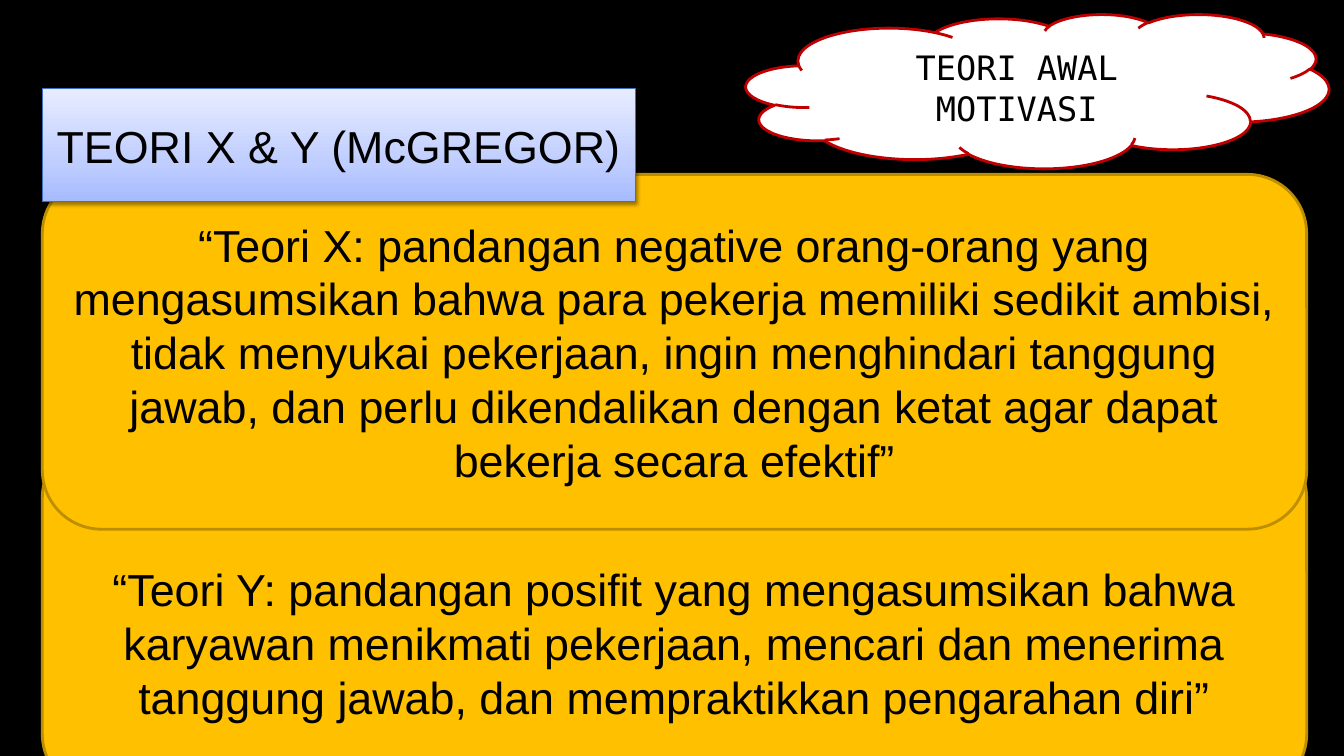
from copy import deepcopy
from dataclasses import dataclass

from lxml.etree import SubElement
from pptx import Presentation
from pptx.dml.color import RGBColor
from pptx.enum.shapes import MSO_SHAPE
from pptx.enum.text import MSO_ANCHOR, MSO_AUTO_SIZE, PP_ALIGN
from pptx.oxml.ns import qn
from pptx.shapes.autoshape import Shape
from pptx.slide import Slide
from pptx.util import Emu, Pt

PX = 9144  # 100 px to the inch
COLORS = {
    "black": "000000",
    "white": "FFFFFF",
    "red": "C00000",
    "amber": "FFC000",
    "amber_line": "BD8E00",
    "blue_line": "3F6FC3",
}
TITLE_STOPS = [(0, "A6BBFF"), (35, "C0CEFF"), (100, "E7ECFF")]


@dataclass(frozen=True)
class Panel:
    text: str
    kind: MSO_SHAPE
    box: tuple[int, int, int, int]
    fill: str
    line: str
    size: int = 32
    font: str = "Arial"
    top_inset: int = 5


PANELS = [
    Panel("TEORI AWAL MOTIVASI", MSO_SHAPE.CLOUD, (740, 14, 578, 153),
          "white", "red", size=24, font="DejaVu Sans Mono"),
    Panel("“Teori Y: pandangan posifit yang mengasumsikan bahwa karyawan "
          "menikmati pekerjaan, mencari dan menerima tanggung jawab, dan "
          "mempraktikkan pengarahan diri”",
          MSO_SHAPE.ROUNDED_RECTANGLE, (42, 435, 1254, 352),
          "amber", "amber_line", top_inset=58),
    Panel("“Teori X: pandangan negative orang-orang yang mengasumsikan bahwa "
          "para pekerja memiliki sedikit ambisi, tidak menyukai pekerjaan, "
          "ingin menghindari tanggung jawab, dan perlu dikendalikan dengan "
          "ketat agar dapat bekerja secara efektif”",
          MSO_SHAPE.ROUNDED_RECTANGLE, (42, 173, 1254, 352),
          "amber", "amber_line"),
]


def px(n: int) -> Emu:
    return Emu(n * PX)


def rgb(name: str) -> RGBColor:
    return RGBColor.from_string(COLORS[name])


def set_text(sp: Shape, text: str, *, size: int = 32, font: str = "Arial",
             color: str = "black", top_inset: int = 5) -> None:
    tf = sp.text_frame
    tf.word_wrap = True
    tf.auto_size = MSO_AUTO_SIZE.NONE
    tf.vertical_anchor = MSO_ANCHOR.MIDDLE
    tf.margin_top = px(top_inset)
    p = tf.paragraphs[0]
    p.alignment = PP_ALIGN.CENTER
    r = p.add_run()
    r.text = text
    r.font.size = Pt(size)
    r.font.name = font
    r.font.color.rgb = rgb(color)


def set_line(sp: Shape, color: str, width: float) -> None:
    sp.line.color.rgb = rgb(color)
    sp.line.width = Pt(width)


def add_panel(s: Slide, panel: Panel) -> None:
    sp = s.shapes.add_shape(panel.kind, *map(px, panel.box))
    sp.shadow.inherit = False
    sp.fill.solid()
    sp.fill.fore_color.rgb = rgb(panel.fill)
    set_line(sp, panel.line, 2)
    set_text(sp, panel.text, size=panel.size, font=panel.font,
             top_inset=panel.top_inset)


def set_gradient(sp: Shape, stops: list[tuple[int, str]]) -> None:
    sp.fill.gradient()
    sp.fill.gradient_angle = 90
    gs_list = sp._element.spPr.find(".//" + qn("a:gsLst"))
    template = deepcopy(gs_list[0])
    for gs in list(gs_list):
        gs_list.remove(gs)
    for position, color in stops:
        gs = deepcopy(template)
        gs.set("pos", str(position * 1000))
        for child in list(gs):
            gs.remove(child)
        SubElement(gs, qn("a:srgbClr"), val=color)
        gs_list.append(gs)


def add_shadow(sp: Shape) -> None:
    effects = SubElement(sp._element.spPr, qn("a:effectLst"))
    shadow = SubElement(effects, qn("a:outerShdw"), blurRad=str(Pt(3.1)),
                        dist=str(Pt(1.6)), dir="5400000", rotWithShape="0")
    color = SubElement(shadow, qn("a:srgbClr"), val=COLORS["black"])
    SubElement(color, qn("a:alpha"), val="38000")


def format_title(s: Slide, text: str, box: tuple[int, int, int, int]) -> None:
    sp = s.shapes.title
    sp.left, sp.top, sp.width, sp.height = map(px, box)
    geometry = SubElement(sp._element.spPr, qn("a:prstGeom"), prst="roundRect")
    SubElement(geometry, qn("a:avLst"))
    set_gradient(sp, TITLE_STOPS)
    set_line(sp, "blue_line", 0.75)
    add_shadow(sp)
    set_text(sp, text)
    # Bring the title in front of the panels
    s.shapes._spTree.append(sp._element)


def main() -> None:
    prs = Presentation()
    prs.slide_width, prs.slide_height = px(1333), px(750)
    s = prs.slides.add_slide(prs.slide_layouts[5])

    # Background
    s.background.fill.solid()
    s.background.fill.fore_color.rgb = rgb("black")

    # Cloud and theory panels
    for panel in PANELS:
        add_panel(s, panel)

    # Title
    format_title(s, "TEORI X & Y (McGREGOR)", (42, 88, 588, 112))

    prs.save("out.pptx")


if __name__ == "__main__":
    main()
